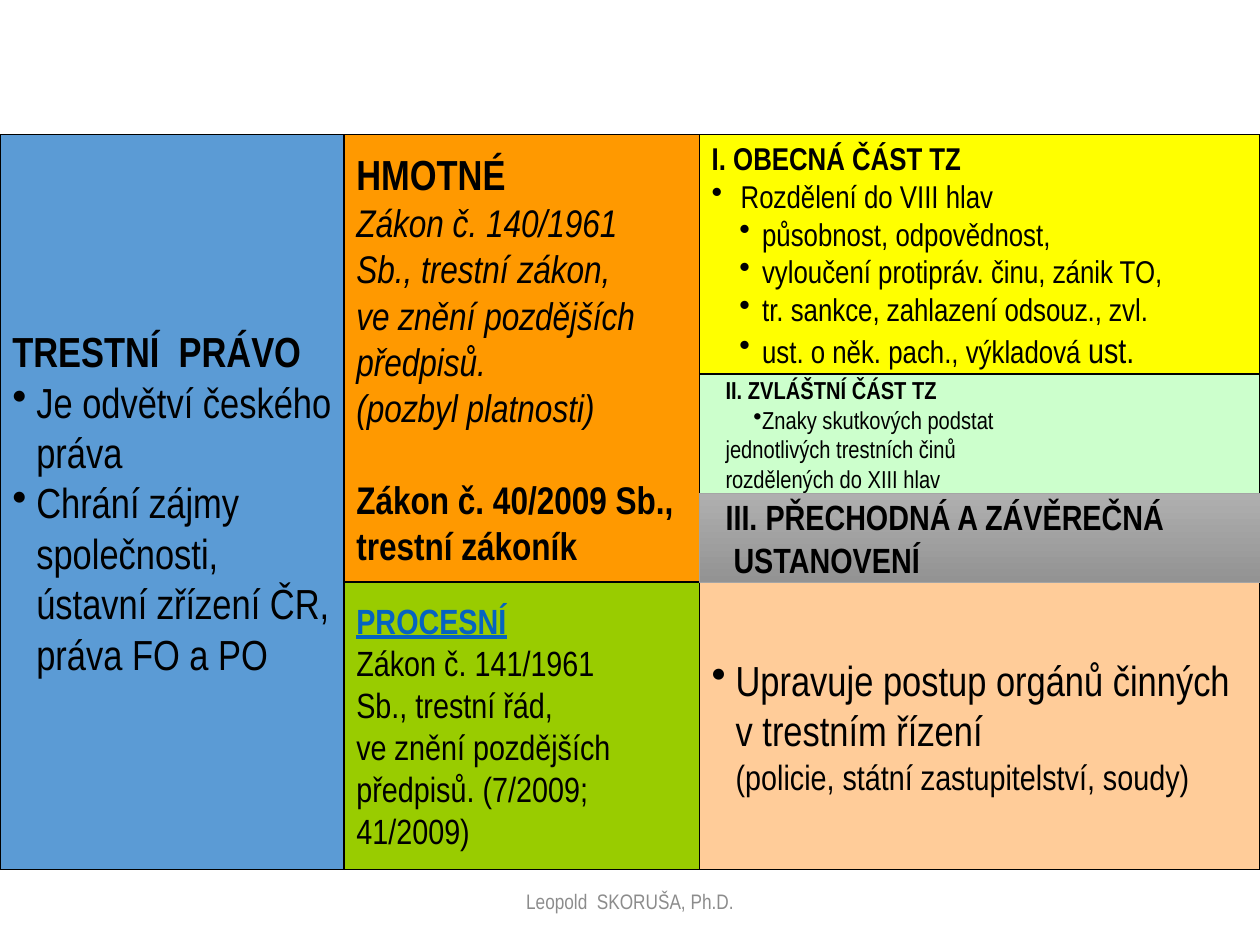
import pptx
import pptx.util
import pptx.dml.color
import pptx.enum.shapes
import pptx.enum.text
import pptx.oxml
import pptx.oxml.ns
from pptx.util import Inches

HUES = {
    "black": "000000", "blue": "5B9BD5", "orange": "FF9900", "green": "99CC00",
    "yellow": "FFFF00", "mint": "CCFFCC", "peach": "FFCC99", "gray": "A5A5A5",
    "light": "AFAFAF", "dark": "939393", "link": "0563C1", "foot": "8C8C8C",
}
ALIGN = pptx.enum.text.PP_ALIGN


def tint(name):
    return pptx.dml.color.RGBColor.from_string(HUES[name])


class Deck:
    """Holds the style and the current slide."""
    font = "Arial Narrow"

    def __init__(self, width, height):
        self.file = pptx.Presentation()
        self.file.slide_width = Inches(width)
        self.file.slide_height = Inches(height)
        self.slide = self.file.slides.add_slide(self.file.slide_layouts[6])

    def para(self, para, text, size, bold=False, slant=False, under=False,
             hue="black", align=ALIGN.LEFT, left=0, first=0, dot=False,
             level=0, gap=0, tail=None, tail_size=20):
        para.text = text
        para.alignment = align
        para.level = level
        props = para._p.get_or_add_pPr()
        props.set("marL", str(Inches(left)))
        props.set("indent", str(Inches(first)))
        if dot:
            mark = pptx.oxml.parse_xml(
                '<a:buChar %s char="•"/>' % pptx.oxml.ns.nsdecls("a"))
            props.append(mark)
        if gap:
            para.space_before = pptx.util.Pt(gap)
        if tail:
            para.add_run().text = tail
        for run in para.runs:
            font = run.font
            font.name = self.font
            font.size = pptx.util.Pt(size)
            font.bold, font.italic, font.underline = bold, slant, under
            font.color.rgb = tint(hue)
        if tail:
            para.runs[-1].font.size = pptx.util.Pt(tail_size)

    def fill_text(self, shape, rows, size, wrap=False):
        frame = shape.text_frame
        frame.word_wrap = wrap
        frame.auto_size = pptx.enum.text.MSO_AUTO_SIZE.NONE
        frame.vertical_anchor = pptx.enum.text.MSO_ANCHOR.MIDDLE
        for num, (text, style) in enumerate(rows):
            para = frame.add_paragraph() if num else frame.paragraphs[0]
            self.para(para, text, **{"size": size, **style})

    def box(self, left, top, right, bottom, hue, rows, size):
        shape = self.slide.shapes.add_shape(
            pptx.enum.shapes.MSO_SHAPE.RECTANGLE, Inches(left), Inches(top),
            Inches(right - left), Inches(bottom - top))
        shape.shadow.inherit = False
        shape.fill.solid()
        shape.fill.fore_color.rgb = tint(hue)
        shape.line.color.rgb = tint("black")
        shape.line.width = pptx.util.Pt(0.75)
        self.fill_text(shape, rows, size)
        return shape

    def shade(self, shape, start, end, edge):
        shape.fill.gradient()
        shape.fill.gradient_angle = 270
        for stop, hue in zip(shape.fill.gradient_stops, (start, end)):
            stop.color.rgb = tint(hue)
        shape.line.color.rgb = tint(edge)
        shape.line.width = pptx.util.Pt(0.5)

    def label(self, left, top, width, height, rows, size):
        shape = self.slide.shapes.add_textbox(
            Inches(left), Inches(top), Inches(width), Inches(height))
        self.fill_text(shape, rows, size, wrap=True)


def main():
    deck = Deck(10, 7.5)

    # Column edges, and row edges from top to bottom
    x1, x2, x3, x4 = 0, 2.73, 5.55, 10
    top, part2, part3, split, end = 1.07, 2.97, 3.92, 4.62, 6.9

    # Paragraph styles
    bold = {"bold": True}
    slant = {"slant": True, "size": 22}
    law = {"bold": True, "size": 22}
    dot = {"dot": True, "left": 0.19, "first": -0.19}
    just = {"align": ALIGN.JUSTIFY}
    item = {**just, "dot": True, "left": 0.23, "first": -0.23}
    sub = {**just, "dot": True, "left": 0.4, "first": -0.18, "level": 1}
    inset = {"first": 0.11}

    # Left column: the branch of law
    deck.box(x1, top, x2, end, "blue", [
        ("TRESTNÍ  PRÁVO", bold),
        ("Je odvětví českého \vpráva", dot),
        ("Chrání zájmy \vspolečnosti, \vústavní zřízení ČR,\vpráva FO a PO", dot),
    ], 24)

    # Middle column: substantive and procedural law
    deck.box(x2, top, x3, split, "orange", [
        ("HMOTNÉ", {"bold": True, "size": 24}),
        ("Zákon č. 140/1961", slant),
        ("Sb., trestní zákon,", slant),
        ("ve znění pozdějších", slant),
        ("předpisů. \v(pozbyl platnosti)", slant),
        ("Zákon č. 40/2009 Sb.,", {**law, "gap": 26}),
        ("trestní zákoník", law),
    ], 22)
    deck.box(x2, split, x3, end, "green", [
        ("PROCESNÍ", {"bold": True, "under": True, "hue": "link"}),
        ("Zákon č. 141/1961", {}),
        ("Sb., trestní řád,", {}),
        ("ve znění pozdějších", {}),
        ("předpisů. (7/2009;", {}),
        ("41/2009)", {}),
    ], 20)

    # Right column: parts of the code
    deck.box(x3, top, x4, part2, "yellow", [
        ("I. OBECNÁ ČÁST TZ", {**just, **bold}),
        ("Rozdělení do VIII hlav", item),
        ("působnost, odpovědnost, ", sub),
        ("vyloučení protipráv. činu, zánik TO,", sub),
        ("tr. sankce, zahlazení odsouz., zvl.", sub),
        ("ust. o něk. pach., výkladová ", {**sub, "tail": "ust."}),
    ], 18)
    deck.box(x3, part2, x4, part3, "mint", [
        ("II. ZVLÁŠTNÍ ČÁST TZ", {**inset, **bold}),
        ("Znaky skutkových podstat", {"dot": True, "left": 0.4, "first": -0.07}),
        ("jednotlivých trestních činů", inset),
        ("rozdělených do XIII hlav", inset),
    ], 14)
    deck.box(x3, split, x4, end, "peach", [
        ("Upravuje postup orgánů činných \vv trestním řízení \v",
         {**dot, "tail": "(policie, státní zastupitelství, soudy)"}),
    ], 24)
    last = deck.box(x3, part3, x4, split, "gray", [
        ("III. PŘECHODNÁ A ZÁVĚREČNÁ", {**inset, **bold}),
        (" USTANOVENÍ", {**inset, **bold}),
    ], 20)
    deck.shade(last, "light", "dark", "gray")

    # Footer
    deck.label(3.31, 6.95, 3.38, 0.4, [
        ("Leopold  SKORUŠA, Ph.D.", {"hue": "foot", "align": ALIGN.CENTER}),
    ], 12)

    deck.file.save("out.pptx")


if __name__ == "__main__":
    main()
